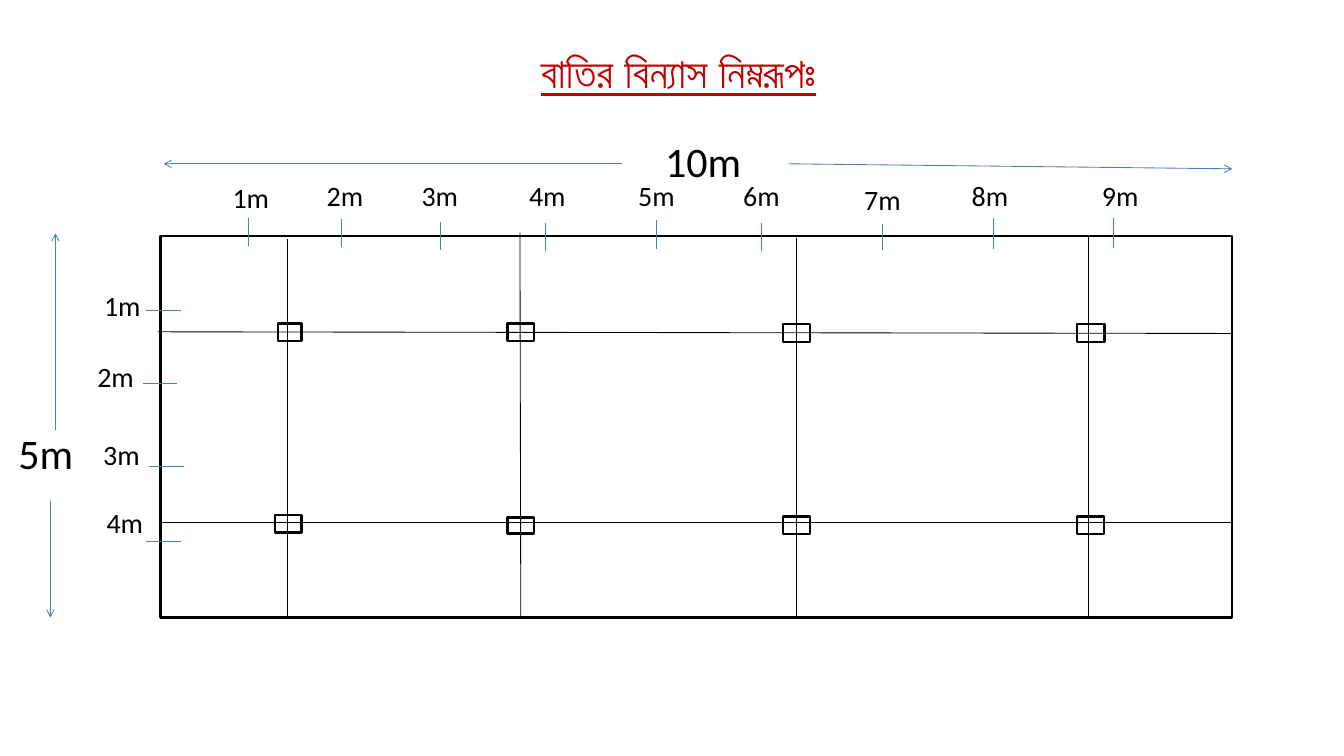
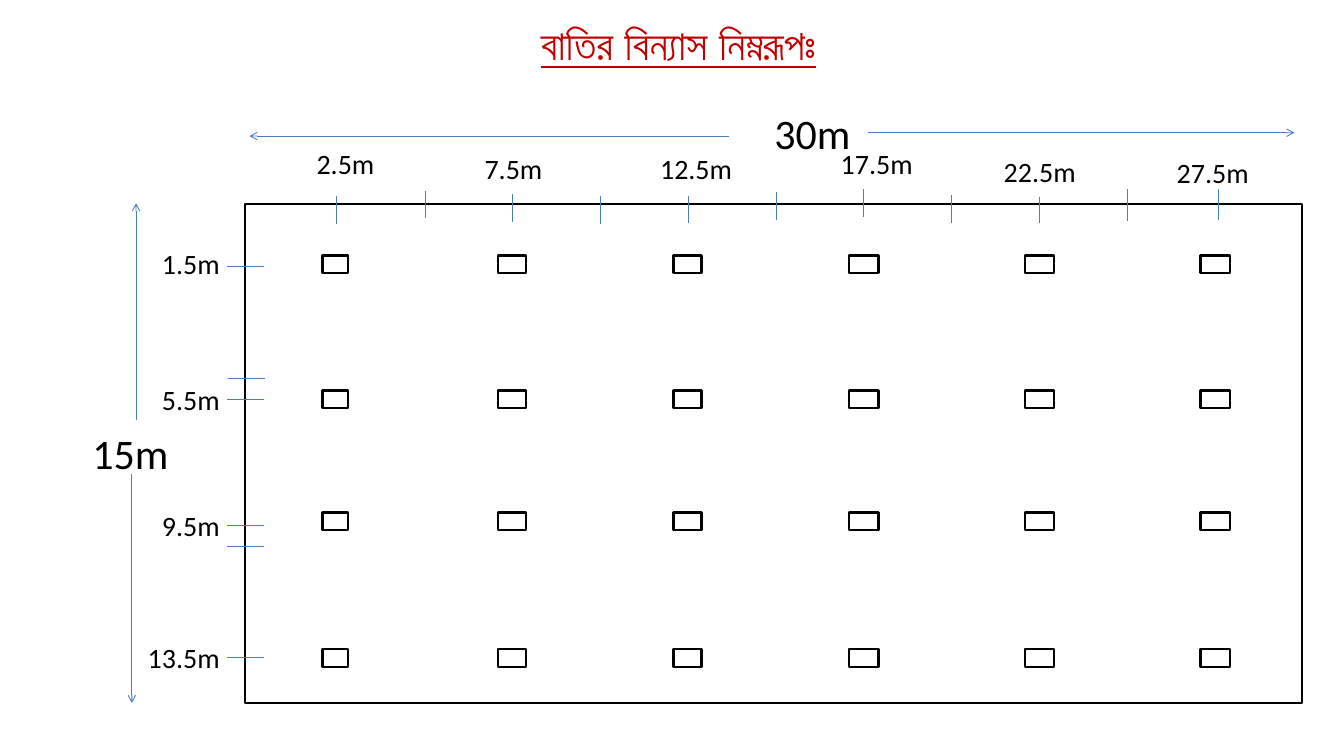
"""Build two slides that show how lamps are laid out in a 10 m and a 30 m room."""
from lxml.etree import SubElement
from pptx import Presentation
from pptx.dml.color import RGBColor
from pptx.enum.shapes import MSO_CONNECTOR as CONNECTOR, MSO_SHAPE as SHAPE
from pptx.enum.text import MSO_AUTO_SIZE as AUTO_SIZE, PP_ALIGN as ALIGN
from pptx.oxml.ns import qn
from pptx.util import Pt

PX = 9144
COLORS = {"title": "C00000", "ink": "000000", "guide": "4B7EBC", "paper": "FFFFFF"}
FONT = "Calibri"
TITLE = "বাতির বিন্যাস নিম্নরূপঃ"
LABEL_WIDTHS = {2: 64, 4: 94, 5: 111}

small_room = {
    "title_top": 50,
    "sizes": [("5m", 12, 504, 96), ("10m", 782, 156, 125)],
    "arrows": [(66, 512, 66, 278), (60, 597, 60, 735),
               (741, 195, 195, 195), (939, 195, 1467, 201)],
    "room": (191, 281, 1276, 454),
    "lamps": [(331, 385, 28, 21), (604, 385, 32, 21), (932, 386, 32, 21), (1282, 386, 33, 21),
              (327, 613, 32, 21), (604, 616, 32, 19), (932, 615, 32, 21), (1282, 615, 32, 21)],
    "top_ticks": [(296, 260, 33), (407, 261, 33), (524, 264, 34), (649, 266, 33),
                  (782, 262, 34), (907, 265, 34), (1051, 267, 31), (1183, 259, 37),
                  (1325, 259, 36)],
    "side_ticks": [(174, 369, 41), (170, 457, 41), (177, 555, 42), (174, 645, 41)],
    "wires": [(188, 395, 1467, 397), (189, 622, 1467, 622), (342, 285, 342, 735),
              (619, 277, 620, 735), (948, 283, 948, 735), (1296, 282, 1296, 735)],
    "labels": [("1m", 114, 339), ("2m", 106, 423), ("3m", 113, 516), ("4m", 117, 597),
               ("1m", 267, 210), ("2m", 379, 208), ("3m", 492, 208), ("4m", 620, 208),
               ("5m", 750, 208), ("6m", 875, 208), ("7m", 1019, 212), ("8m", 1147, 208),
               ("9m", 1302, 208)],
}
lamp_widths = [30, 33, 33, 35, 35, 35]
large_room = {
    "title_top": 17,
    "sizes": [("15m", 100, 504, 131), ("30m", 912, 123, 131)],
    "arrows": [(162, 500, 162, 242), (157, 564, 157, 837),
               (868, 162, 297, 162), (1033, 158, 1541, 158)],
    "room": (292, 243, 1258, 594),
    "lamps": [(384 + 209 * column, top, width, 21)
              for top in (304, 465, 610, 773) for column, width in enumerate(lamp_widths)],
    "top_ticks": [(401, 233, 34), (506, 227, 33), (610, 231, 33), (715, 233, 34),
                  (819, 233, 33), (924, 229, 33), (1028, 225, 33), (1133, 232, 33),
                  (1238, 234, 31), (1342, 225, 38), (1450, 225, 37)],
    "side_ticks": [(270, 317, 44), (271, 450, 44), (270, 475, 44), (270, 625, 44),
                   (270, 650, 44), (270, 783, 44)],
    "wires": [],
    "labels": [("1.5m", 183, 288), ("5.5m", 183, 450), ("9.5m", 183, 600), ("13.5m", 166, 758),
               ("2.5m", 367, 170), ("7.5m", 567, 175), ("12.5m", 776, 175),
               ("17.5m", 991, 170), ("22.5m", 1185, 179), ("27.5m", 1391, 180)],
}


def write(page, text, left, top, width, height=50, size=24, color="ink",
          bold=None, underline=None, align=None, wrap=False):
    box = page.shapes.add_textbox(left * PX, top * PX, width * PX, height * PX)
    box.text_frame.word_wrap = wrap
    box.text_frame.auto_size = AUTO_SIZE.SHAPE_TO_FIT_TEXT
    para = box.text_frame.paragraphs[0]
    para.alignment = align
    span = para.add_run()
    span.text = text
    span.font.name = FONT
    span.font.size = Pt(size)
    span.font.bold = bold
    span.font.underline = underline
    span.font.color.rgb = RGBColor.from_string(COLORS[color])


def draw_line(page, ends, color="guide", arrow=False):
    line = page.shapes.add_connector(CONNECTOR.STRAIGHT, *[end * PX for end in ends])
    line.line.color.rgb = RGBColor.from_string(COLORS[color])
    line.line.width = Pt(0.75)
    if arrow:
        SubElement(line.line._get_or_add_ln(), qn("a:tailEnd"), type="arrow")
    SubElement(line._element.spPr, qn("a:effectLst"))


deck = Presentation()
deck.slide_width, deck.slide_height = 1600 * PX, 900 * PX

for plan in (small_room, large_room):
    page = deck.slides.add_slide(deck.slide_layouts[6])
    write(page, TITLE, 620, plan["title_top"], 375, height=71, size=36, color="title",
          bold=True, underline=True, align=ALIGN.CENTER)
    for text, left, top, width in plan["sizes"]:
        write(page, text, left, top, width, height=71, size=36, wrap=True)
    for ends in plan["arrows"]:
        draw_line(page, ends, arrow=True)
    for frame in [plan["room"], *plan["lamps"]]:
        shape = page.shapes.add_shape(SHAPE.RECTANGLE, *[length * PX for length in frame])
        shape.shadow.inherit = False
        shape.fill.solid()
        shape.fill.fore_color.rgb = RGBColor.from_string(COLORS["paper"])
        shape.line.color.rgb = RGBColor.from_string(COLORS["ink"])
        shape.line.width = Pt(2)
    for x, top, height in plan["top_ticks"]:
        draw_line(page, (x, top, x, top + height))
    for left, y, width in plan["side_ticks"]:
        draw_line(page, (left, y, left + width, y))
    for ends in plan["wires"]:
        draw_line(page, ends, color="ink")
    for text, left, top in plan["labels"]:
        write(page, text, left, top, LABEL_WIDTHS[len(text)])

deck.save("out.pptx")
